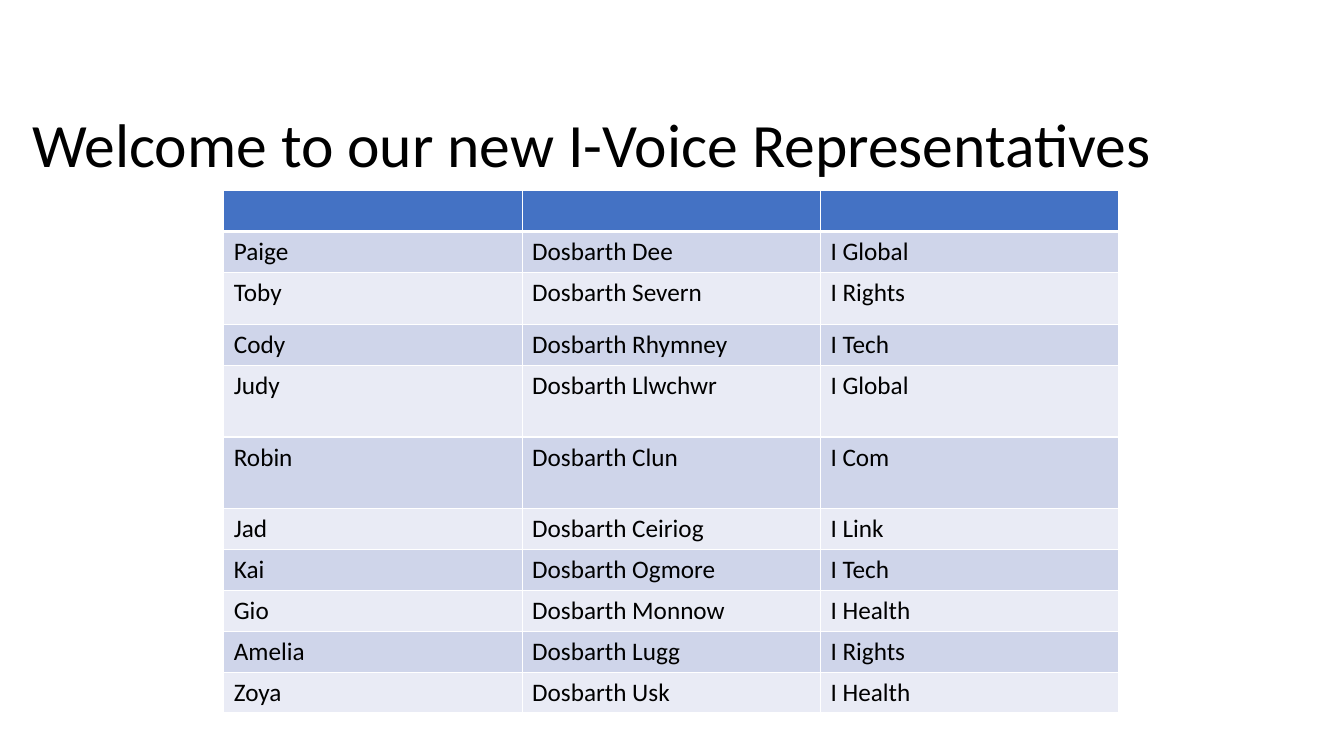
from typing import NamedTuple

from lxml import etree
from pptx import Presentation
from pptx import util as u
from pptx.dml.color import RGBColor
from pptx.enum import text
from pptx.oxml import ns

FONT = "Calibri"
BLACK, WHITE, BLUE = "000000", "FFFFFF", "4472C4"
BANDS = ("CFD5EA", "E9EBF5")
WIDTH = 213.12  # each column
BASE = 29.2  # height of a row with one line


class Rep(NamedTuple):
    name: str
    group: str
    team: str
    high: float = BASE


REPS = [
    Rep("Paige", "Dosbarth Dee", "I Global"),
    Rep("Toby", "Dosbarth Severn", "I Rights", 37.3),
    Rep("Cody", "Dosbarth Rhymney", "I Tech"),
    Rep("Judy", "Dosbarth Llwchwr", "I Global", 51.2),
    Rep("Robin", "Dosbarth Clun", "I Com", 51.2),
    Rep("Jad", "Dosbarth Ceiriog", "I Link"),
    Rep("Kai", "Dosbarth Ogmore", "I Tech"),
    Rep("Gio", "Dosbarth Monnow", "I Health"),
    Rep("Amelia", "Dosbarth Lugg", "I Rights"),
    Rep("Zoya", "Dosbarth Usk", "I Health"),
]


def color(code: str) -> RGBColor:
    return RGBColor.from_string(code)


def style(frame, size: float) -> None:
    for para in frame.paragraphs:
        for run in para.runs:
            run.font.name = FONT
            run.font.size = u.Pt(size)
            run.font.color.rgb = color(BLACK)


def border(cell, side: str, width: float) -> None:
    props = cell._tc.get_or_add_tcPr()
    line = etree.SubElement(props, ns.qn(f"a:ln{side}"), w=str(u.Pt(width)))
    fill = etree.SubElement(line, ns.qn("a:solidFill"))
    etree.SubElement(fill, ns.qn("a:srgbClr"), val=WHITE)


def paint(cell, words: str, fill: str, top: float, low: float) -> None:
    cell.text_frame.text = words
    style(cell.text_frame, 18)
    for side, width in (("L", 1), ("R", 1), ("T", top), ("B", low)):
        border(cell, side, width)
    cell.fill.solid()
    cell.fill.fore_color.rgb = color(fill)


def title(slide, words: str) -> None:
    box = slide.shapes.add_textbox(u.Pt(15.84), u.Pt(53.28), u.Pt(828), u.Pt(104.4))
    frame = box.text_frame
    frame.word_wrap = True
    frame.vertical_anchor = text.MSO_ANCHOR.MIDDLE
    frame.text = words
    frame.paragraphs[0].line_spacing = 0.9
    style(frame, 44)


def roster(slide, reps: list[Rep]) -> None:
    rows = [Rep("", "", ""), *reps]  # the header row is empty
    high = sum(rep.high for rep in rows)
    table = slide.shapes.add_table(
        len(rows), 3, u.Pt(159.84), u.Pt(136.08), u.Pt(3 * WIDTH), u.Pt(high)
    ).table
    for col in table.columns:
        col.width = u.Pt(WIDTH)
    for i, rep in enumerate(rows):
        table.rows[i].height = u.Pt(rep.high)
        fill = BANDS[(i - 1) % 2] if i else BLUE
        # A thick rule parts the header from the names
        top, low = (3 if i == 1 else 1), (1 if i else 3)
        for j, words in enumerate((rep.name, rep.group, rep.team)):
            paint(table.cell(i, j), words, fill, top, low)


def main() -> None:
    deck = Presentation()
    deck.slide_width, deck.slide_height = u.Pt(960), u.Pt(540)
    slide = deck.slides.add_slide(deck.slide_layouts[6])
    title(slide, "Welcome to our new I-Voice Representatives")
    roster(slide, REPS)
    deck.save("out.pptx")


if __name__ == "__main__":
    main()
